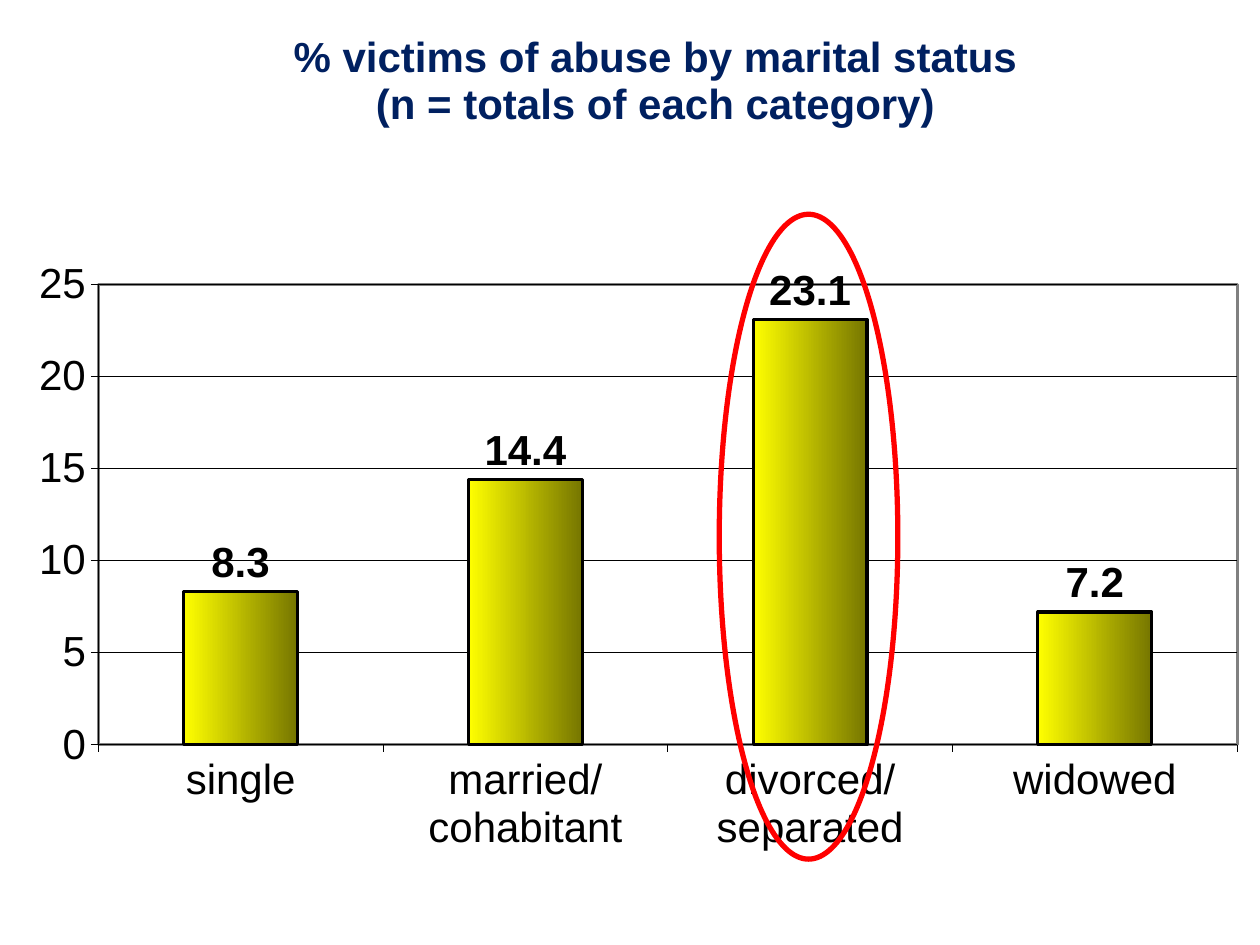
from dataclasses import dataclass

import pptx
import pptx.chart.data
import pptx.dml.color
import pptx.enum.chart
import pptx.enum.shapes
import pptx.oxml
import pptx.oxml.ns
import pptx.util
from pptx.util import Cm

COLORS = {"text": "000000", "title": "002060", "frame": "808080",
          "bar_light": "FFFF00", "bar_dark": "767600", "highlight": "FF0000"}
TITLE = ["% victims of abuse by marital status", "(n = totals of each category)"]


@dataclass
class Status:
    label: str
    percent: float


STATUSES = [
    Status("single", 8.3),
    Status("married/ cohabitant", 14.4),
    Status("divorced/ separated", 23.1),
    Status("widowed", 7.2),
]


def rgb(name: str) -> pptx.dml.color.RGBColor:
    return pptx.dml.color.RGBColor.from_string(COLORS[name])


def set_font(font, color: str = "text", **values) -> None:
    for name, value in ({"name": "Arial", "size": pptx.util.Pt(24)} | values).items():
        setattr(font, name, value)
    font.color.rgb = rgb(color)


def set_line(line, color: str, width: float) -> None:
    line.color.rgb = rgb(color)
    line.width = pptx.util.Pt(width)


def manual_layout(**values):
    """Layout element; modes must come before the lengths."""
    parts = "".join(f'<c:{k} val="{v}"/>' for k, v in values.items())
    return pptx.oxml.parse_xml(
        f'<c:layout {pptx.oxml.ns.nsdecls("c")}><c:manualLayout>{parts}'
        "</c:manualLayout></c:layout>")


def add_title(chart) -> None:
    tf = chart.chart_title.text_frame
    for i, text in enumerate(TITLE):
        p = tf.paragraphs[0] if i == 0 else tf.add_paragraph()
        r = p.add_run()
        r.text = text
        set_font(r.font, "title", bold=True)
    title = chart.element.xpath(".//c:title")[0]
    for old in title.xpath("./c:layout"):
        title.remove(old)
    title.xpath("./c:tx")[0].addnext(
        manual_layout(xMode="edge", yMode="edge", x=0.23, y=0.03))


def place_plot(chart) -> None:
    area = chart.element.xpath(".//c:plotArea")[0]
    for old in area.xpath("./c:layout"):
        area.remove(old)
    area.insert(0, manual_layout(layoutTarget="inner", xMode="edge", yMode="edge",
                                 x=0.078, y=0.301, w=0.904, h=0.487))
    area.append(pptx.oxml.parse_xml(
        f'<c:spPr {pptx.oxml.ns.nsdecls("c", "a")}><a:noFill/><a:ln w="19050"><a:solidFill>'
        f'<a:srgbClr val="{COLORS["frame"]}"/></a:solidFill></a:ln></c:spPr>'))


def format_axes(chart) -> None:
    for axis in (chart.category_axis, chart.value_axis):
        set_font(axis.tick_labels.font, bold=False)
        set_line(axis.format.line, "text", 0.44)
        axis.major_tick_mark = pptx.enum.chart.XL_TICK_MARK.OUTSIDE
    axis = chart.value_axis
    axis.minimum_scale, axis.maximum_scale, axis.major_unit = 0, 25, 5
    set_line(axis.major_gridlines.format.line, "text", 0.44)


def format_bars(chart) -> None:
    plot = chart.plots[0]
    plot.gap_width = 150
    plot.vary_by_categories = False
    bars = plot.series[0]
    fill = bars.format.fill
    fill.gradient()
    fill.gradient_angle = 0
    for stop, color in zip(fill.gradient_stops, ("bar_light", "bar_dark")):
        stop.color.rgb = rgb(color)
    set_line(bars.format.line, "text", 1.75)
    labels = bars.data_labels
    labels.show_value = True
    labels.position = pptx.enum.chart.XL_LABEL_POSITION.OUTSIDE_END
    set_font(labels.font, bold=True)


def main() -> None:
    prs = pptx.Presentation()
    prs.slide_width, prs.slide_height = Cm(25.4), Cm(19.05)
    s = prs.slides.add_slide(prs.slide_layouts[6])

    # Column chart over the whole slide
    data = pptx.chart.data.CategoryChartData(number_format="General")
    data.categories = [status.label for status in STATUSES]
    data.add_series("Series 1", [status.percent for status in STATUSES])
    chart = s.shapes.add_chart(
        pptx.enum.chart.XL_CHART_TYPE.COLUMN_CLUSTERED,
        0, 0, prs.slide_width, prs.slide_height, data).chart
    chart.has_legend = False
    set_font(chart.font, size=pptx.util.Pt(17.1))
    add_title(chart)
    place_plot(chart)
    format_axes(chart)
    format_bars(chart)

    # Ring around the highest column
    sp = s.shapes.add_shape(pptx.enum.shapes.MSO_SHAPE.OVAL,
                            Cm(14.5), Cm(4.32), Cm(3.6), Cm(13))
    sp.shadow.inherit = False
    sp.fill.background()
    set_line(sp.line, "highlight", 3)

    prs.save("out.pptx")


if __name__ == "__main__":
    main()
